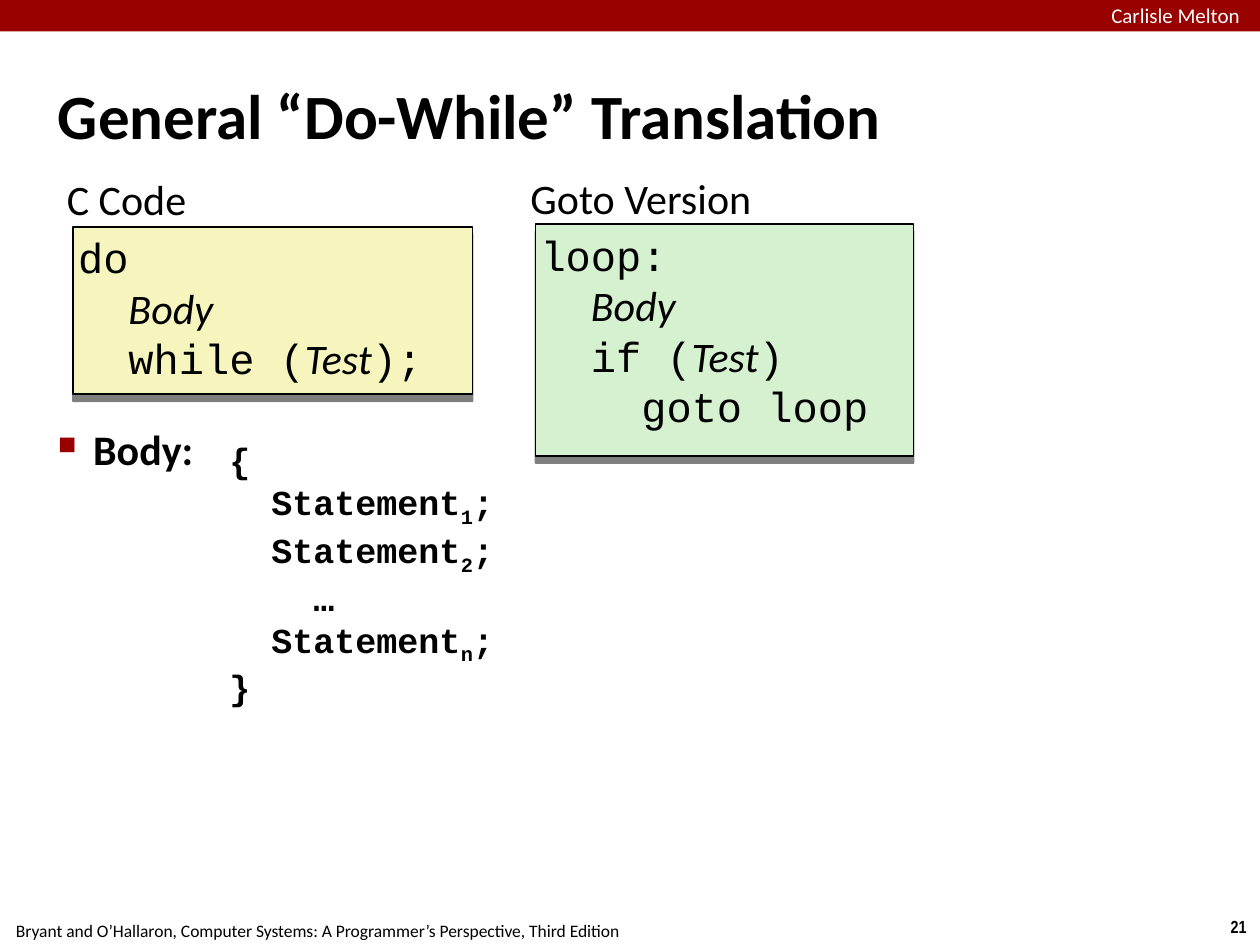
from dataclasses import dataclass

from lxml.etree import SubElement
from pptx import Presentation
from pptx.dml.color import RGBColor
from pptx.enum.shapes import MSO_SHAPE
from pptx.enum.text import MSO_ANCHOR, PP_ALIGN
from pptx.oxml.ns import qn
from pptx.util import Inches, Pt


@dataclass(frozen=True)
class Theme:
    black: str = "000000"
    white: str = "FFFFFF"
    red: str = "990000"
    yellow: str = "F6F5BD"
    green: str = "D5F1CF"
    sans: str = "Calibri"
    mono: str = "Courier New"
    narrow: str = "Arial Narrow"
    title: int = 36
    large: int = 24
    code: int = 20
    small: int = 12
    tiny: int = 10


THEME = Theme()


def color(code):
    return RGBColor.from_string(code)


def style(run, size, face=THEME.sans, tint=THEME.black, bold=False):
    font = run.font
    font.size, font.name, font.bold = Pt(size), face, bold
    font.color.rgb = color(tint)


def fit(frame, inset=0.04, wrap=True):
    frame.word_wrap = wrap
    frame.margin_left = frame.margin_right = Inches(inset)
    frame.margin_top = frame.margin_bottom = Inches(inset)


def add_text(slide, place, text, size, inset=0.04, wrap=True, **look):
    """Add a one-line text box and return its text frame."""
    box = slide.shapes.add_textbox(*map(Inches, place))
    frame = box.text_frame
    fit(frame, inset, wrap)
    frame.text = text
    style(frame.paragraphs[0].runs[0], size, **look)
    return frame


def add_note(slide, place, text, **look):
    frame = add_text(slide, place, text, THEME.tiny, 0.05, False, **look)
    frame.paragraphs[0].alignment = PP_ALIGN.CENTER


def add_rect(slide, place, fill):
    rect = slide.shapes.add_shape(MSO_SHAPE.RECTANGLE, *map(Inches, place))
    rect.shadow.inherit = False
    rect.fill.solid()
    rect.fill.fore_color.rgb = color(fill)
    rect.line.fill.background()
    return rect


def drop_shadow(shape):
    """Cast a hard half-clear shadow straight down."""
    effects = shape._element.spPr.find(qn("a:effectLst"))
    cast = SubElement(effects, qn("a:outerShdw"), blurRad="0",
                      dist=str(Pt(4)), dir="5400000", rotWithShape="0")
    tint = SubElement(cast, qn("a:srgbClr"), val=THEME.black)
    SubElement(tint, qn("a:alpha"), val="50000")


def add_lines(frame, lines, size, bold=False):
    """Fill a frame with code; "_" marks a subscript, "/" an italic word."""
    fit(frame)
    for i, line in enumerate(lines):
        para = frame.paragraphs[0] if i == 0 else frame.add_paragraph()
        para.alignment = PP_ALIGN.LEFT
        for part in line:
            run = para.add_run()
            mark = part[0] if part[0] in "_/" else ""
            run.text = part[len(mark):]
            face = THEME.sans if mark == "/" else THEME.mono
            style(run, size, face, bold=bold)
            run.font.italic = mark == "/"
            if mark == "_":
                run._r.get_or_add_rPr().set("baseline", "-25000")


def add_code(slide, place, fill, label, spot, lines):
    """Add a labelled panel of code."""
    add_text(slide, spot, label, THEME.large)
    panel = add_rect(slide, place, fill)
    panel.line.color.rgb = color(THEME.black)
    panel.line.width = Pt(1)
    drop_shadow(panel)
    panel.text_frame.vertical_anchor = MSO_ANCHOR.TOP
    add_lines(panel.text_frame, lines, THEME.large)


def add_bullet(slide, place, text):
    frame = add_text(slide, place, text, THEME.large, bold=True)
    para = frame.paragraphs[0]
    para.space_before = Pt(6)
    props = para._p.get_or_add_pPr()
    props.set("marL", str(Inches(0.28)))
    props.set("indent", str(Inches(-0.28)))
    tint = SubElement(props, qn("a:buClr"))
    SubElement(tint, qn("a:srgbClr"), val=THEME.red)
    SubElement(props, qn("a:buSzPct"), val="60000")
    SubElement(props, qn("a:buChar"), char="■")


def add_block(slide, place):
    """Add the braces and the numbered statements of the body."""
    first, second, last = (["  Statement", f"_{n}", ";"] for n in "12n")
    lines = [["{"], first, second, ["    …"], last, ["}"]]
    box = slide.shapes.add_textbox(*map(Inches, place))
    add_lines(box.text_frame, lines, THEME.code, bold=True)


def main():
    deck = Presentation()
    deck.slide_width, deck.slide_height = Inches(10), Inches(7.5)
    slide = deck.slides.add_slide(deck.slide_layouts[6])

    add_note(slide, (9.66, 7.22, 0.34, 0.27), "21",
             face=THEME.narrow, bold=True)
    add_note(slide, (-0.02, 7.25, 5.08, 0.27),
             "Bryant and O’Hallaron, Computer Systems: "
             "A Programmer’s Perspective, Third Edition")
    add_rect(slide, (0, 0, 10.01, 0.25), THEME.red)
    add_text(slide, (8.82, 0.02, 1.44, 0.19), "Carlisle Melton",
             THEME.small, inset=0, tint=THEME.white)

    add_code(slide, (0.58, 1.8, 3.17, 1.33), THEME.yellow,
             "C Code", (0.49, 1.34, 2.86, 0.49),
             [["do"], ["  ", "/Body"], ["  while (", "/Test", ");"]])
    add_code(slide, (4.25, 1.78, 3, 1.84), THEME.green,
             "Goto Version", (4.17, 1.33, 2.53, 0.49),
             [["loop:"], ["  ", "/Body"], ["  if (", "/Test", ")"],
              ["    goto loop"]])

    title = add_text(slide, (0.42, 0.28, 9.17, 1.25),
                     "General “Do-While” Translation", THEME.title, bold=True)
    title.vertical_anchor = MSO_ANCHOR.MIDDLE
    add_bullet(slide, (0.42, 3.32, 9.17, 4.15), "Body:")
    add_block(slide, (1.78, 3.44, 2.43, 2.47))
    deck.save("out.pptx")


if __name__ == "__main__":
    main()
